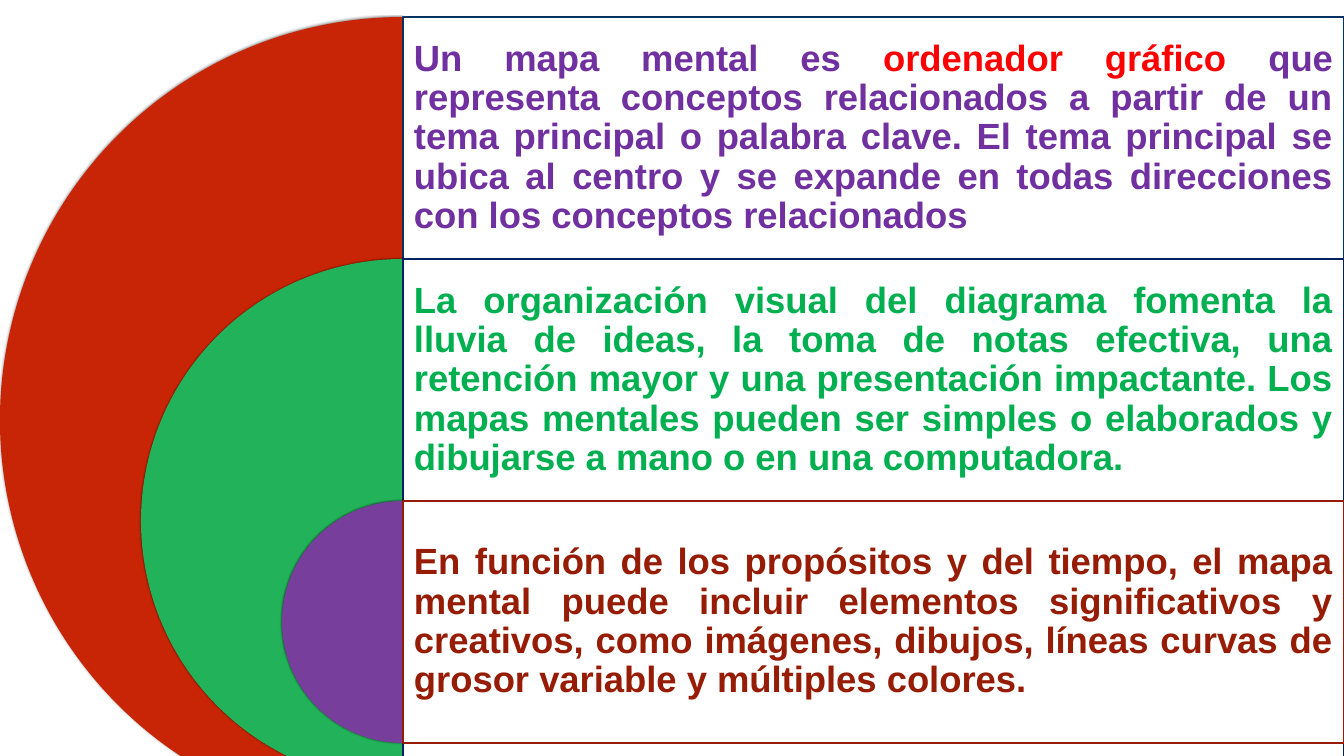
from pptx import Presentation
from pptx.dml.color import RGBColor
from pptx.enum.shapes import MSO_SHAPE as Preset
from pptx.enum.text import MSO_ANCHOR as Anchor, PP_ALIGN as Align
from pptx.oxml.ns import qn
from pptx.util import Emu, Pt
from lxml.etree import SubElement

SCALE = 12897  # EMU per px
PAGE_WIDTH, PAGE_HEIGHT = 1344, 756
CENTRE_X = 403
FIRST_TOP = 17
ROW_HEIGHT = 242
RING_STEP = 282
INSET = 11

# Pie colour, frame colour, and text runs with their colours
ROWS = [
    ("C82506", "013260", [
        ("Un mapa mental es ", "7030A0"),
        ("ordenador gráfico ", "FF0000"),
        ("que representa conceptos relacionados a partir de un tema principal "
         "o palabra clave. El tema principal se ubica al centro y se expande "
         "en todas direcciones con los conceptos relacionados", "7030A0"),
    ]),
    ("22B259", "002060", [
        ("La organización visual del diagrama fomenta la lluvia de ideas, la "
         "toma de notas efectiva, una retención mayor y una presentación "
         "impactante. Los mapas mentales pueden ser simples o elaborados y "
         "dibujarse a mano o en una computadora.", "00B050"),
    ]),
    ("773F9B", "961C05", [
        ("En función de los propósitos y del tiempo, el mapa mental puede "
         "incluir elementos significativos y creativos, como imágenes, "
         "dibujos, líneas curvas de grosor variable y múltiples colores.",
         "961C05"),
    ]),
]


def px(length):
    return Emu(length * SCALE)


def colour(code):
    return RGBColor.from_string(code)


def add_filled(page, preset, left, top, width, height, fill):
    shape = page.shapes.add_shape(preset, px(left), px(top), px(width), px(height))
    shape.shadow.inherit = False
    shape.fill.solid()
    shape.fill.fore_color.rgb = colour(fill)
    return shape


def add_half_disc(page, top, diameter, fill):
    disc = add_filled(page, Preset.PIE, CENTRE_X - diameter // 2, top,
                      diameter, diameter, fill)
    disc.adjustments[0] = 54
    disc.adjustments[1] = 162
    disc.line.fill.background()
    # Soft dark glow around the edge
    effects = disc._element.spPr.find(qn("a:effectLst"))
    shadow = SubElement(effects, qn("a:outerShdw"), blurRad=str(Pt(2)),
                        dist="0", dir="0", rotWithShape="0")
    black = SubElement(shadow, qn("a:srgbClr"), val="000000")
    SubElement(black, qn("a:alpha"), val="50000")


def add_frame(page, top, height, edge):
    frame = add_filled(page, Preset.RECTANGLE, CENTRE_X, top,
                       PAGE_WIDTH - CENTRE_X, height, "FFFFFF")
    frame.line.color.rgb = colour(edge)
    frame.line.width = Pt(2.25)
    # Slightly see-through white
    white = frame._element.spPr.find(qn("a:solidFill")).find(qn("a:srgbClr"))
    SubElement(white, qn("a:alpha"), val="90000")


def add_statement(page, top, runs):
    box = page.shapes.add_textbox(px(CENTRE_X), px(top),
                                  px(PAGE_WIDTH - CENTRE_X), px(ROW_HEIGHT))
    frame = box.text_frame
    frame.word_wrap = True
    frame.vertical_anchor = Anchor.MIDDLE
    frame.margin_left = frame.margin_right = px(INSET)
    frame.margin_top = frame.margin_bottom = px(INSET)
    para = frame.paragraphs[0]
    para.alignment = Align.JUSTIFY
    para.line_spacing = 0.9
    para.space_after = Pt(13)
    for text, ink in runs:
        span = para.add_run()
        span.text = text
        span.font.name = "Arial"
        span.font.size = Pt(37)
        span.font.bold = True
        span.font.color.rgb = colour(ink)


def main():
    deck = Presentation()
    deck.slide_width, deck.slide_height = px(PAGE_WIDTH), px(PAGE_HEIGHT)
    page = deck.slides.add_slide(deck.slide_layouts[6])

    # Each row starts a smaller disc, with a frame as tall as the disc
    for index, (fill, edge, runs) in enumerate(ROWS):
        top = FIRST_TOP + index * ROW_HEIGHT
        diameter = ROW_HEIGHT + (len(ROWS) - 1 - index) * RING_STEP
        add_half_disc(page, top, diameter, fill)
        add_frame(page, top, diameter, edge)
        add_statement(page, top, runs)

    deck.save("out.pptx")


if __name__ == "__main__":
    main()
